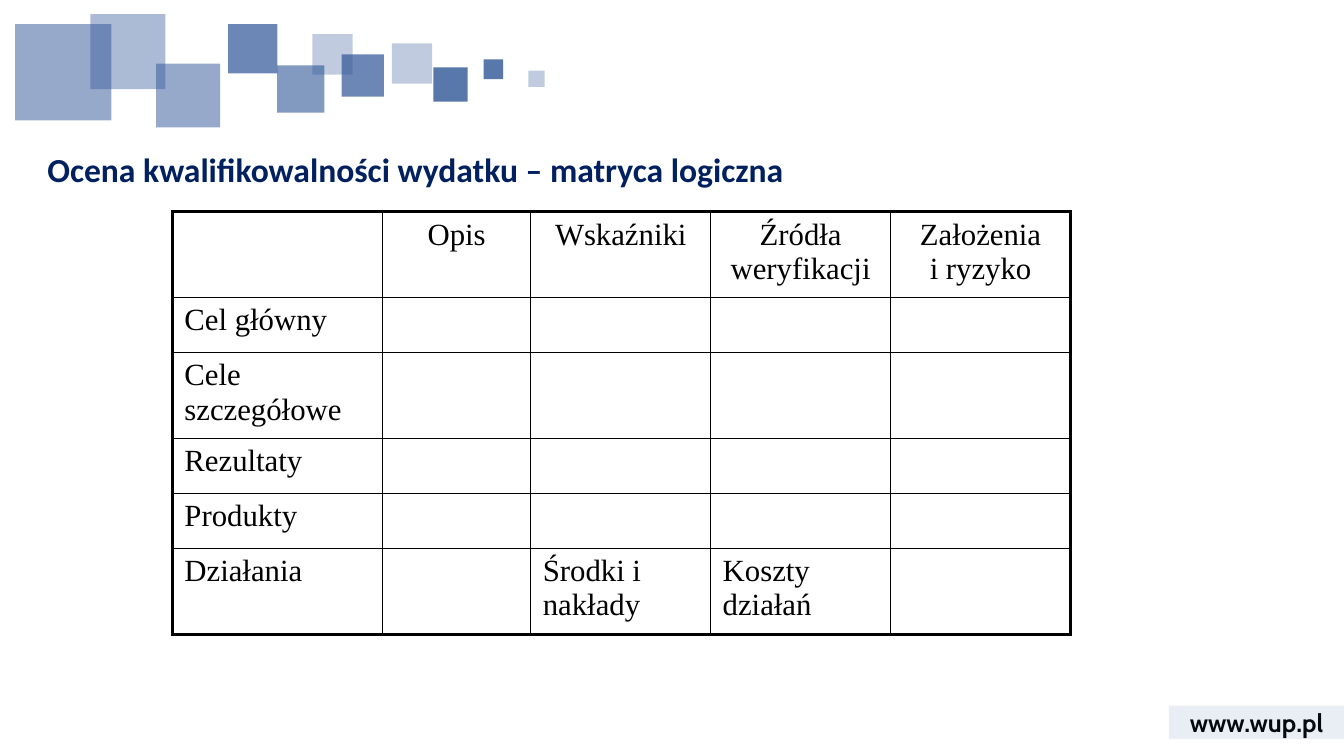
from lxml.etree import SubElement
from pptx import Presentation
from pptx.dml.color import RGBColor
from pptx.enum.shapes import MSO_SHAPE as Shape
from pptx.enum.text import MSO_ANCHOR as Anchor, PP_ALIGN as Align
from pptx.oxml.ns import qn
from pptx.util import Pt

# Content
TITLE = "Ocena kwalifikowalności wydatku – matryca logiczna"
SITE = "www.wup.pl"
MATRIX = [
    ["", "Opis", "Wskaźniki", "Źródła weryfikacji", "Założenia\ni ryzyko"],
    ["Cel główny", "", "", "", ""],
    ["Cele szczegółowe", "", "", "", ""],
    ["Rezultaty", "", "", "", ""],
    ["Produkty", "", "", "", ""],
    ["Działania", "", "Środki i nakłady", "Koszty działań", ""],
]
COLUMN_WIDTHS = [150, 106, 128.5, 128.5, 128.5]
ONE_LINE, TWO_LINES = 39.3, 57.2
ROW_HEIGHTS = [TWO_LINES, ONE_LINE, TWO_LINES, ONE_LINE, ONE_LINE, TWO_LINES]

# Header squares: left, top, side, opacity in percent
SQUARES = [
    (280, 31, 28.8, 30), (309.6, 48.2, 24.5, 80), (244.1, 38.9, 30.2, 70),
    (10.8, 17.3, 68.8, 50), (198, 46.8, 33.8, 60), (111.6, 45.4, 45.7, 50),
    (64.6, 10.1, 53.6, 40), (345.4, 42.4, 14.1, 80), (162.9, 17.2, 35.3, 70),
    (223.2, 24.5, 28.8, 30), (377.4, 50.4, 11.6, 30),
]
BLUE, NAVY, BLACK = "2F5597", "002060", "000000"
THIN, THICK = 1, 2.25


def color(value):
    return RGBColor.from_string(value)


def add_text(para, text, font, size, value, bold=False):
    for number, line in enumerate(text.split("\n")):
        if number:
            para.add_line_break()
        span = para.add_run()
        span.text = line
        span.font.name, span.font.size = font, Pt(size)
        span.font.bold, span.font.color.rgb = bold, color(value)


def add_tint(page, left, top, width, height, opacity):
    box = page.shapes.add_shape(Shape.RECTANGLE, Pt(left), Pt(top), Pt(width), Pt(height))
    box.shadow.inherit = False
    box.line.fill.background()
    box.fill.solid()
    box.fill.fore_color.rgb = color(BLUE)
    tone = box.fill._xPr.find(qn("a:solidFill"))[0]
    SubElement(tone, qn("a:alpha"), val=str(opacity * 1000))


def set_borders(cell, widths):
    properties = cell._tc.get_or_add_tcPr()
    for side, width in widths.items():
        line = SubElement(properties, qn("a:ln" + side), w=str(int(Pt(width))))
        fill = SubElement(line, qn("a:solidFill"))
        SubElement(fill, qn("a:srgbClr"), val=BLACK)


deck = Presentation()
deck.slide_width, deck.slide_height = Pt(960), Pt(540)
page = deck.slides.add_slide(deck.slide_layouts[5])

# Title
title = page.shapes.title
title.left, title.top, title.width, title.height = Pt(26.6), Pt(102.7), Pt(546), Pt(36.4)
title.text_frame.word_wrap = False
title.text_frame.vertical_anchor = Anchor.MIDDLE
title.text_frame.paragraphs[0].alignment = Align.LEFT
add_text(title.text_frame.paragraphs[0], TITLE, "Calibri", 24, NAVY, True)

# Web address under its pale band
site = page.shapes.add_textbox(Pt(840), Pt(502), Pt(115.2), Pt(28.8)).text_frame
site.word_wrap = True
site.vertical_anchor = Anchor.MIDDLE
site.paragraphs[0].alignment = Align.CENTER
add_text(site.paragraphs[0], SITE, "Cabin", 18, BLACK, True)
add_tint(page, 835, 504, 125, 24, 10)

# Header squares
for left, top, side, opacity in SQUARES:
    add_tint(page, left, top, side, side, opacity)

# Logic matrix
last_row, last_column = len(MATRIX) - 1, len(COLUMN_WIDTHS) - 1
table = page.shapes.add_table(
    len(MATRIX), len(COLUMN_WIDTHS), Pt(123.2), Pt(151.2),
    Pt(sum(COLUMN_WIDTHS)), Pt(sum(ROW_HEIGHTS))).table
table.first_row = table.horz_banding = False
for column, width in zip(table.columns, COLUMN_WIDTHS):
    column.width = Pt(width)
for row, height in zip(table.rows, ROW_HEIGHTS):
    row.height = Pt(height)

for r, texts in enumerate(MATRIX):
    for c, text in enumerate(texts):
        cell = table.cell(r, c)
        cell.margin_left = cell.margin_right = Pt(8.6)
        cell.margin_top = cell.margin_bottom = Pt(4.3)
        set_borders(cell, {
            "L": THICK if c == 0 else THIN,
            "R": THICK if c == last_column else THIN,
            "T": THICK if r == 0 else THIN,
            "B": THICK if r == last_row else THIN,
        })
        cell.fill.background()
        if text:
            para = cell.text_frame.paragraphs[0]
            para.alignment = Align.CENTER if r == 0 else Align.LEFT
            add_text(para, text, "Times New Roman", 22, BLACK)

deck.save("out.pptx")
